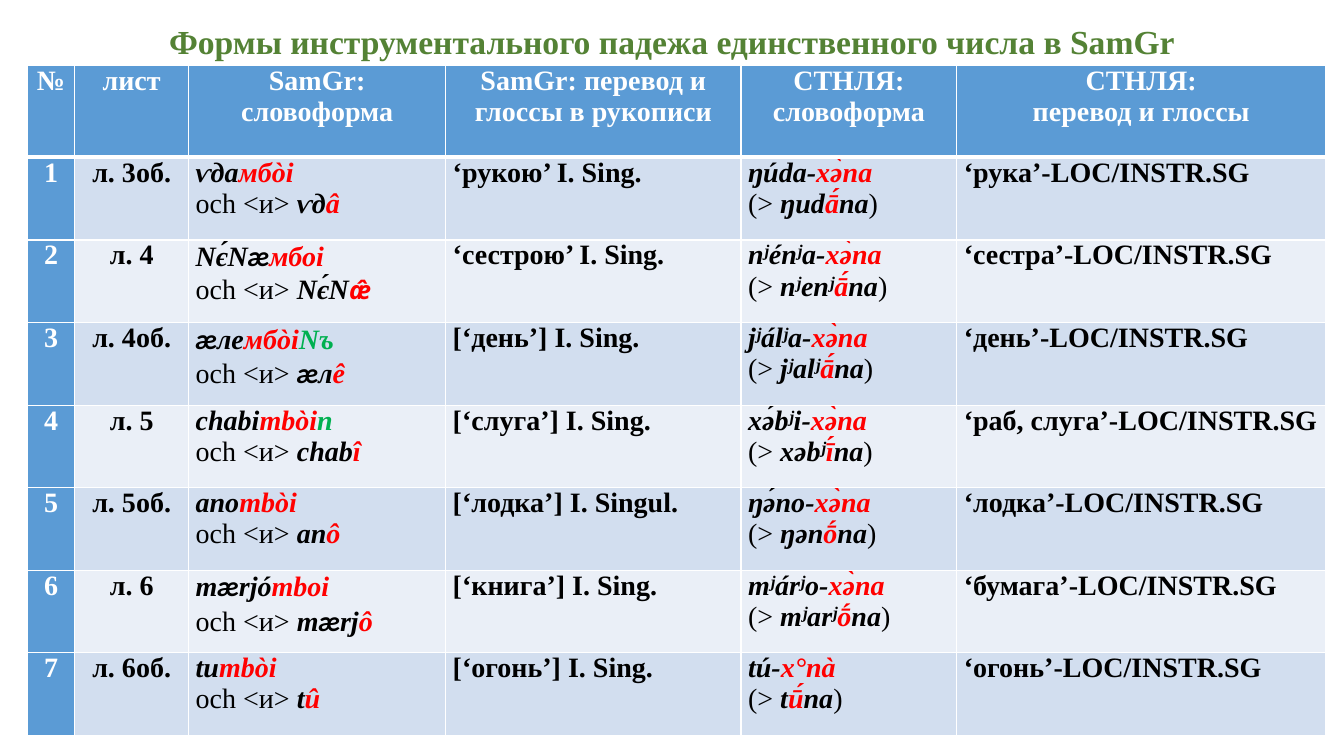
from itertools import groupby

from lxml import etree
from pptx import Presentation
from pptx.dml.color import RGBColor
from pptx.enum.text import MSO_ANCHOR, PP_ALIGN
from pptx.oxml.ns import qn
from pptx.util import Pt

LEFT, CENTER = PP_ALIGN.LEFT, PP_ALIGN.CENTER
MIDDLE = MSO_ANCHOR.MIDDLE
WHITE = RGBColor(0xFF, 0xFF, 0xFF)
BLACK = RGBColor(0, 0, 0)
RED = RGBColor(0xFF, 0, 0)
GREEN = RGBColor(0, 0xB0, 0x50)
TITLE_GREEN = RGBColor(0x54, 0x82, 0x35)
HEADER_BLUE = RGBColor(0x5B, 0x9B, 0xD5)
BANDS = (RGBColor(0xD2, 0xDE, 0xEF), RGBColor(0xEA, 0xEF, 0xF7))

SERIF, SANS = "Times New Roman", "Calibri"
LIGATURE = "æ̂"  # ligature and its accent are set in the sans face

COLUMN_WIDTHS = (33.8, 81.4, 183.6, 211, 154.1, 263.5)
HEADER_HEIGHT, ROW_HEIGHT = 65.6, 59
HEADINGS = ("№", "лист", "SamGr:\ncловоформа", "SamGr: перевод и глоссы в рукописи",
            "СТНЛЯ:\ncловоформа", "СТНЛЯ:\nперевод и глоссы")

# Leaf, manuscript form (stem, ending, extra), its variant (stem, vowel), manuscript gloss,
# modern form (stem, ending), its variant (stem, vowel), modern gloss
ENTRIES = (
    ("л. 3об.", ("ѵда", "мбòi", ""), ("ѵд", "â"), "‘рукою’ I. Sing.",
     ("ŋúda-", "xə̀na"), ("ŋud", "ā́"), "‘рука’"),
    ("л. 4", ("Nє́Næ", "мбоi", ""), ("Nє́N", "æ̂"), "‘сестрою’ I. Sing.",
     ("nʲénʲa-", "xə̀na"), ("nʲenʲ", "ā́"), "‘сестра’"),
    ("л. 4об.", ("æле", "мбòi", "Nъ"), ("æл", "ê"), "[‘день’] I. Sing.",
     ("jʲálʲa-", "xə̀na"), ("jʲalʲ", "ā́"), "‘день’"),
    ("л. 5", ("chabi", "mbòi", "n"), ("chab", "î"), "[‘слуга’] I. Sing.",
     ("xə́bʲi-", "xə̀na"), ("xəbʲ", "ī́"), "‘раб, слуга’"),
    ("л. 5об.", ("ano", "mbòi", ""), ("an", "ô"), "[‘лодка’] I. Singul.",
     ("ŋə́no-", "xə̀na"), ("ŋən", "ṓ"), "‘лодка’"),
    ("л. 6", ("mærjó", "mboi", ""), ("mærj", "ô"), "[‘книга’] I. Sing.",
     ("mʲárʲo-", "xə̀na"), ("mʲarʲ", "ṓ"), "‘бумага’"),
    ("л. 6об.", ("tu", "mbòi", ""), ("t", "û"), "[‘огонь’] I. Sing.",
     ("tú-", "x°nà"), ("t", "ū́"), "‘огонь’"),
)


def format_span(span, color, size=20, face=SERIF, bold=True, italic=False):
    font = span.font
    font.name, font.size = face, Pt(size)
    font.bold, font.italic = bold, italic
    font.color.rgb = color


def add_border(cell, side, width):
    line = etree.SubElement(cell._tc.get_or_add_tcPr(), qn("a:" + side), w=str(Pt(width)))
    fill = etree.SubElement(line, qn("a:solidFill"))
    etree.SubElement(fill, qn("a:srgbClr"), val=str(WHITE))


def style_cell(cell, fill, bottom=1):
    cell.margin_left = cell.margin_right = Pt(5)
    cell.margin_top = cell.margin_bottom = 0
    for side, width in (("lnL", 1), ("lnR", 1), ("lnT", 1), ("lnB", bottom)):
        add_border(cell, side, width)
    cell.fill.solid()
    cell.fill.fore_color.rgb = fill


def write_plain(cell, text, color=BLACK, align=LEFT):
    cell.text_frame.text = text
    for para in cell.text_frame.paragraphs:
        para.alignment = align
        for span in para.runs:
            format_span(span, color)


def write_form(para, pieces):
    """Bold italic word given as (text, colour) pieces."""
    for text, color in pieces:
        for is_ligature, letters in groupby(text, lambda letter: letter in LIGATURE):
            span = para.add_run()
            span.text = "".join(letters)
            format_span(span, color, 18 if span.text == LIGATURE else 20,
                        SANS if is_ligature else SERIF, italic=True)


def write_remark(para, text):
    span = para.add_run()
    span.text = text
    format_span(span, BLACK, bold=False)


def write_forms(cell, form, opening, variant, closing=""):
    """Word form on the first line, its variant on the second."""
    frame = cell.text_frame
    write_form(frame.paragraphs[0], form)
    para = frame.add_paragraph()
    write_remark(para, opening)
    write_form(para, variant)
    if closing:
        write_remark(para, closing)


def add_title(page, left, top, width, height):
    title = page.shapes.title
    title.left, title.top, title.width, title.height = Pt(left), Pt(top), Pt(width), Pt(height)
    frame = title.text_frame
    frame.text = "Формы инструментального падежа единственного числа в SamGr"
    frame.word_wrap = True
    frame.vertical_anchor = MIDDLE
    para = frame.paragraphs[0]
    para.alignment, para.line_spacing = CENTER, 0.9
    format_span(para.runs[0], TITLE_GREEN, 24)


def add_forms_table(page, left, top):
    height = HEADER_HEIGHT + ROW_HEIGHT * len(ENTRIES)
    table = page.shapes.add_table(len(ENTRIES) + 1, len(HEADINGS), Pt(left), Pt(top),
                                  Pt(sum(COLUMN_WIDTHS)), Pt(height)).table
    table.first_col = True
    for column, width in zip(table.columns, COLUMN_WIDTHS):
        column.width = Pt(width)
    for index, row in enumerate(table.rows):
        row.height = Pt(ROW_HEIGHT if index else HEADER_HEIGHT)

    # Header row
    for index, heading in enumerate(HEADINGS):
        cell = table.cell(0, index)
        style_cell(cell, HEADER_BLUE, bottom=3)
        write_plain(cell, heading, WHITE, CENTER)

    # One row per noun
    for number, entry in enumerate(ENTRIES, 1):
        leaf, old_form, old_variant, old_gloss, new_form, new_variant, meaning = entry
        cells = [table.cell(number, index) for index in range(len(HEADINGS))]
        for index, cell in enumerate(cells):
            style_cell(cell, BANDS[(number - 1) % 2] if index else HEADER_BLUE)
        write_plain(cells[0], str(number), WHITE, CENTER)
        write_plain(cells[1], leaf, align=CENTER)
        write_forms(cells[2], zip(old_form, (BLACK, RED, GREEN)),
                    "och <и> ", zip(old_variant, (BLACK, RED)))
        write_plain(cells[3], old_gloss)
        write_forms(cells[4], zip(new_form, (BLACK, RED)),
                    "(> ", zip((*new_variant, "na"), (BLACK, RED, BLACK)), ")")
        write_plain(cells[5], meaning + "-LOC/INSTR.SG")


def main():
    deck = Presentation()
    deck.slide_width, deck.slide_height = Pt(960), Pt(540)
    page = deck.slides.add_slide(deck.slide_layouts[5])
    add_forms_table(page, 19.6, 46.8)
    add_title(page, 66, 15.8, 828, 31)
    deck.save("out.pptx")


if __name__ == "__main__":
    main()
